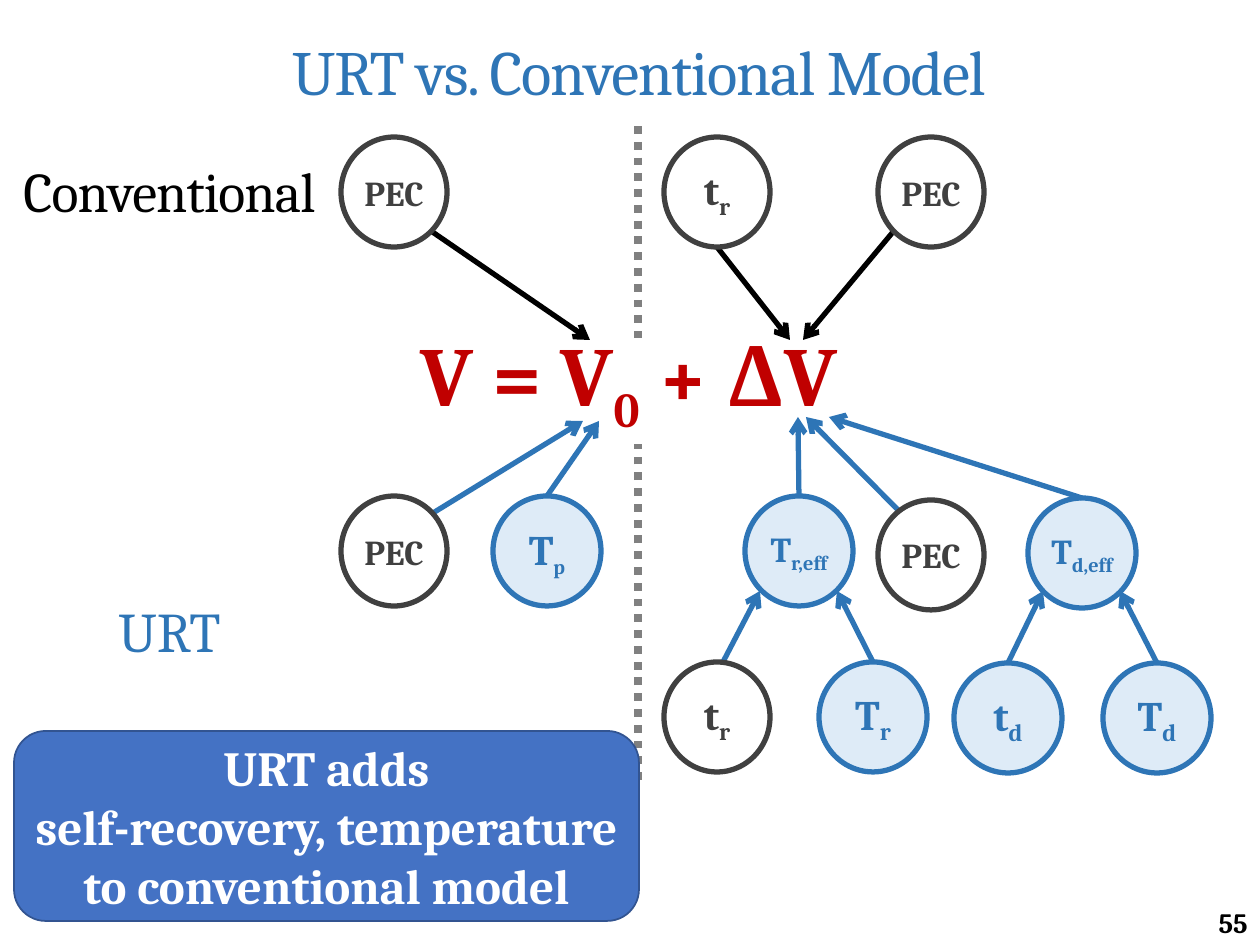
from typing import NamedTuple, Optional

from lxml import etree
from pptx import Presentation
from pptx.dml.color import RGBColor
from pptx.enum.dml import MSO_LINE
from pptx.enum.shapes import MSO_CONNECTOR, MSO_SHAPE
from pptx.enum.text import MSO_ANCHOR, PP_ALIGN
from pptx.oxml.ns import qn
from pptx.util import Pt

EMU_PER_PX = 914400 / 126
STRAIGHT = MSO_CONNECTOR.STRAIGHT
OVAL, ROUNDED = MSO_SHAPE.OVAL, MSO_SHAPE.ROUNDED_RECTANGLE
DOTTED = MSO_LINE.ROUND_DOT
TOP, MIDDLE, BOTTOM = MSO_ANCHOR.TOP, MSO_ANCHOR.MIDDLE, MSO_ANCHOR.BOTTOM
CENTER, RIGHT = PP_ALIGN.CENTER, PP_ALIGN.RIGHT

FONT = "Cambria"
BLUE, PALE_BLUE, BLACK, WHITE = "2E75B6", "DEEBF7", "000000", "FFFFFF"
CHARCOAL, GREY, RED = "404040", "808080", "C00000"
BOX_BLUE, BOX_EDGE = "4472C4", "325491"
NODE_HEIGHT = 110
TOP_SITE = 0


class Piece(NamedTuple):
    text: str
    size: int
    color: str
    bold: bool = True
    subscript: bool = False
    spacing: int = 0


class Label(NamedTuple):
    box: tuple[int, int, int, int]
    pieces: list[Piece]
    anchor: MSO_ANCHOR = TOP
    align: PP_ALIGN = CENTER
    wrap: bool = True
    indent: int = 0
    line_spacing: float = 1.0


class Node(NamedTuple):
    left: int
    top: int
    symbol: str
    subscript: str = ""
    size: int = 24
    subscript_size: int = 24
    is_new: bool = False
    target: Optional[tuple[int, int]] = None


class Arrow(NamedTuple):
    start: tuple[int, int]
    end: tuple[int, int]
    color: str


def px(value: int) -> int:
    return round(value * EMU_PER_PX)


def rgb(color: str) -> RGBColor:
    return RGBColor.from_string(color)


def write(frame, pieces: list[Piece], align: PP_ALIGN, formats: dict):
    for name, value in formats.items():
        setattr(frame, name, value)
    paragraph = frame.paragraphs[0]
    paragraph.alignment = align
    for piece in pieces:
        for number, line in enumerate(piece.text.split("\n")):
            if number:
                paragraph.add_line_break()
            run = paragraph.add_run()
            run.text = line
            run.font.color.rgb = rgb(piece.color)
            for name, value in {"name": FONT, "size": Pt(piece.size), "bold": piece.bold}.items():
                setattr(run.font, name, value)
            properties = run._r.get_or_add_rPr()
            if piece.subscript:
                properties.set("baseline", "-25000")
            if piece.spacing:
                properties.set("spc", str(piece.spacing))
    return paragraph


def draw_label(shapes, label: Label) -> None:
    textbox = shapes.add_textbox(*map(px, label.box))
    paragraph = write(textbox.text_frame, label.pieces, label.align,
                      {"word_wrap": label.wrap, "vertical_anchor": label.anchor})
    paragraph.line_spacing = label.line_spacing
    if label.indent:
        paragraph._p.get_or_add_pPr().set("marL", str(px(label.indent)))


def draw_line(shapes, start: tuple[int, int], end: tuple[int, int], color: str, width: float):
    line = shapes.add_connector(STRAIGHT, *map(px, start + end))
    line.line.color.rgb = rgb(color)
    line.line.width = Pt(width)
    etree.SubElement(line._element.spPr, qn("a:effectLst"))
    return line


def draw_arrow(shapes, arrow: Arrow):
    line = draw_line(shapes, arrow.start, arrow.end, arrow.color, 3)
    etree.SubElement(line._element.spPr.find(qn("a:ln")), qn("a:tailEnd"), type="arrow")
    return line


def draw_block(shapes, kind: MSO_SHAPE, box: tuple[int, int, int, int], fill: str, edge: str,
               edge_width: float, pieces: list[Piece], margin: int = 0):
    block = shapes.add_shape(kind, *map(px, box))
    block.shadow.inherit = False
    block.fill.solid()
    block.fill.fore_color.rgb = rgb(fill)
    block.line.color.rgb = rgb(edge)
    block.line.width = Pt(edge_width)
    write(block.text_frame, pieces, CENTER, {
        "word_wrap": True, "vertical_anchor": MIDDLE, "margin_left": 0, "margin_right": 0,
        "margin_top": px(margin), "margin_bottom": px(margin)})
    return block


def draw_node(shapes, node: Node) -> None:
    color, fill, width = (BLUE, PALE_BLUE, 108) if node.is_new else (CHARCOAL, WHITE, 106)
    pieces = [Piece(node.symbol, node.size, color)]
    if node.subscript:
        pieces.append(Piece(node.subscript, node.subscript_size, color, subscript=True))
    circle = draw_block(shapes, OVAL, (node.left, node.top, width, NODE_HEIGHT),
                        fill, color, 3, pieces)
    if node.target:
        arrow = draw_arrow(shapes, Arrow((node.left + width // 2, node.top), node.target, color))
        arrow.begin_connect(circle, TOP_SITE)


LABELS = [
    Label((0, 0, 1260, 150), [Piece("URT vs. Conventional Model", 36, BLUE, False, spacing=-70)],
          anchor=MIDDLE, indent=18, line_spacing=0.9),
    Label((1129, 898, 131, 47), [Piece("55", 16, BLACK)], anchor=BOTTOM, align=RIGHT),
    Label((404, 316, 451, 115), [Piece("V = V", 48, RED), Piece("0", 48, RED, subscript=True),
                                 Piece(" + ΔV", 48, RED)], wrap=False),
    Label((3, 150, 333, 81), [Piece("Conventional", 32, BLACK, False, spacing=-50)]),
    Label((3, 590, 333, 81), [Piece("URT", 32, BLUE, False)]),
]
DIVIDERS = [((638, 126), (638, 338)), ((638, 780), (638, 444))]
ARROWS = [
    Arrow((431, 231), (590, 340), BLACK),
    Arrow((717, 247), (790, 340), BLACK),
    Arrow((893, 232), (803, 340), BLACK),
    Arrow((433, 513), (583, 421), BLUE),
    Arrow((723, 662), (760, 591), BLUE),
    Arrow((903, 515), (806, 417), BLUE),
]
NODES = [
    Node(341, 137, "PEC", size=20),
    Node(664, 137, "t", "r"),
    Node(878, 137, "PEC", size=20),
    Node(341, 496, "PEC", size=20),
    Node(493, 496, "T", "p", subscript_size=20, is_new=True, target=(599, 421)),
    Node(745, 496, "T", "r,eff", 20, 20, True, (798, 417)),
    Node(878, 500, "PEC", size=20),
    Node(1028, 498, "T", "d,eff", 20, 20, True, (829, 417)),
    Node(664, 662, "t", "r"),
    Node(819, 662, "T", "r", is_new=True, target=(837, 591)),
    Node(954, 663, "t", "d", is_new=True, target=(1043, 591)),
    Node(1103, 663, "T", "d", is_new=True, target=(1120, 591)),
]
SUMMARY = "URT adds\nself-recovery, temperature\nto conventional model"


def main() -> None:
    deck = Presentation()
    deck.slide_width, deck.slide_height = px(1260), px(945)
    shapes = deck.slides.add_slide(deck.slide_layouts[6]).shapes
    for label in LABELS:
        draw_label(shapes, label)
    for start, end in DIVIDERS:
        draw_line(shapes, start, end, GREY, 4.5).line.dash_style = DOTTED
    for arrow in ARROWS:
        draw_arrow(shapes, arrow)
    for node in NODES:
        draw_node(shapes, node)
    draw_block(shapes, ROUNDED, (14, 731, 625, 190), BOX_BLUE, BOX_EDGE, 1,
               [Piece(SUMMARY, 28, WHITE)], margin=6)
    deck.save("out.pptx")


if __name__ == "__main__":
    main()
